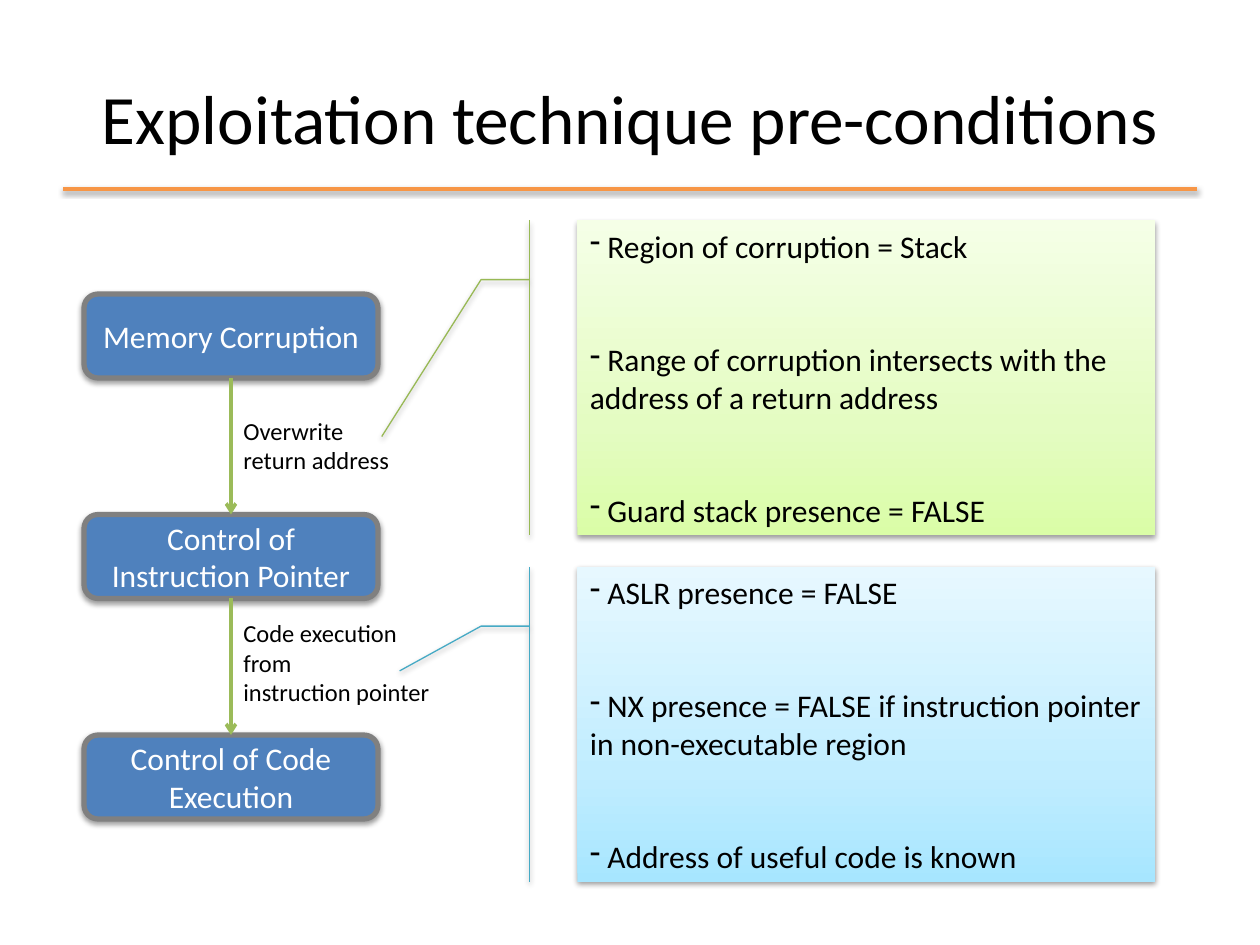
from copy import deepcopy

from lxml import etree
from pptx import Presentation
from pptx.dml.color import RGBColor
from pptx.enum.shapes import MSO_CONNECTOR, MSO_SHAPE
from pptx.enum.text import MSO_ANCHOR, MSO_AUTO_SIZE, PP_ALIGN
from pptx.oxml.ns import qn
from pptx.util import Inches, Pt

STRAIGHT = MSO_CONNECTOR.STRAIGHT
ROUNDED = MSO_SHAPE.ROUNDED_RECTANGLE
CALLOUT = MSO_SHAPE.LINE_CALLOUT_2_ACCENT_BAR
TOP, MIDDLE = MSO_ANCHOR.TOP, MSO_ANCHOR.MIDDLE
LEFT, CENTER = PP_ALIGN.LEFT, PP_ALIGN.CENTER
FIT_SHAPE = MSO_AUTO_SIZE.SHAPE_TO_FIT_TEXT
BOTTOM_SITE, TOP_SITE = 2, 0

FONT = "Calibri"
COLORS = {
    "text": "000000",
    "step_text": "FFFFFF",
    "step_fill": "4F81BD",
    "step_line": "808080",
    "arrow": "9BBB59",
    "rule": "F79646",
    "green_line": "98B955",
    "blue_line": "46AAC5",
}
GRADIENTS = {
    "green": ("DAFDA7", "E4FCC2", "F5FFE7"),
    "blue": ("A7E6FF", "C1EDFF", "E7F8FF"),
}
GRADIENT_POSITIONS = (0, 0.35, 1)

STEPS = ["Memory Corruption", "Control of Instruction Pointer", "Control of Code Execution"]
LABELS = [
    ((22, 39, 16.4, 6.8), ["Overwrite", "return address"]),
    ((22, 58.3, 20.4, 9.7), ["Code execution", "from", "instruction pointer"]),
]
CALLOUTS = [
    ("green", (0.686, -0.339), [
        " Region of corruption = Stack",
        " Range of corruption intersects with the address of a return address",
        " Guard stack presence = FALSE",
    ]),
    ("blue", (0.33, -0.308), [
        " ASLR presence = FALSE",
        " NX presence = FALSE if instruction pointer in non-executable region",
        " Address of useful code is known",
    ]),
]


def grid(units):
    return Inches(units / 12)


def place(box):
    return [grid(units) for units in box]


def color(name):
    return RGBColor.from_string(COLORS[name])


def set_line(shape, name, width):
    shape.line.color.rgb = color(name)
    shape.line.width = Pt(width)


def set_effects(shape, shadow):
    properties = shape._element.spPr
    effects = etree.SubElement(properties, qn("a:effectLst"))
    if shadow:
        outer = etree.SubElement(effects, qn("a:outerShdw"), blurRad=str(Pt(3.1)),
                                 dist=str(Pt(1.6)), dir="5400000", rotWithShape="0")
        black = etree.SubElement(outer, qn("a:srgbClr"), val="000000")
        etree.SubElement(black, qn("a:alpha"), val="38000")


def write(shape, lines, size, name="text", align=LEFT, anchor=TOP):
    frame = shape.text_frame
    frame.text = "\n".join(lines)
    frame.vertical_anchor = anchor
    for paragraph in frame.paragraphs:
        paragraph.alignment = align
        for run in paragraph.runs:
            run.font.name = FONT
            run.font.size = Pt(size)
            run.font.color.rgb = color(name)


def add_header(slide, box):
    left, top, width, height = box
    title = slide.shapes.title
    title.left, title.top, title.width, title.height = place(box)
    write(title, ["Exploitation technique pre-conditions"], 39.6, align=CENTER, anchor=MIDDLE)
    rule = slide.shapes.add_connector(STRAIGHT, *place((left, 18, left + width, 18)))
    set_line(rule, "rule", 2)
    set_effects(rule, True)


def add_step(slide, box, text):
    step = slide.shapes.add_shape(ROUNDED, *place(box))
    step.fill.solid()
    step.fill.fore_color.rgb = color("step_fill")
    set_line(step, "step_line", 3)
    set_effects(step, True)
    write(step, [text], 18, "step_text", CENTER, MIDDLE)
    return step


def add_arrow(slide, start, end):
    arrow = slide.shapes.add_connector(STRAIGHT, 0, 0, 0, 0)
    arrow.begin_connect(start, BOTTOM_SITE)
    arrow.end_connect(end, TOP_SITE)
    set_line(arrow, "arrow", 2)
    etree.SubElement(arrow.line._get_or_add_ln(), qn("a:tailEnd"), type="arrow")
    set_effects(arrow, False)


def add_label(slide, box, lines):
    label = slide.shapes.add_textbox(*place(box))
    write(label, lines, 14)
    label.text_frame.word_wrap = False
    label.text_frame.auto_size = FIT_SHAPE


def add_flow(slide, box):
    left, top, width, height = box
    step_height = 8
    pitch = (height - step_height) / (len(STEPS) - 1)
    steps = [
        add_step(slide, (left, top + index * pitch, width, step_height), text)
        for index, text in enumerate(STEPS)
    ]
    for start, end in zip(steps, steps[1:]):
        add_arrow(slide, start, end)
    for label_box, lines in LABELS:
        add_label(slide, label_box, lines)


def set_gradient(shape, shades):
    shape.fill.gradient()
    shape.fill.gradient_angle = 90
    stop_list = shape._element.spPr.find(".//" + qn("a:gsLst"))
    stop_list.append(deepcopy(stop_list[0]))
    for stop, shade, position in zip(shape.fill.gradient_stops, shades, GRADIENT_POSITIONS):
        stop.color.rgb = RGBColor.from_string(shade)
        stop.position = position


def add_callout(slide, box, theme, pointer, lines):
    callout = slide.shapes.add_shape(CALLOUT, *place(box))
    for index, value in enumerate((0.188, -0.083, 0.188, -0.167, *pointer)):
        callout.adjustments[index] = value
    set_gradient(callout, GRADIENTS[theme])
    set_line(callout, theme + "_line", 0.75)
    set_effects(callout, True)
    write(callout, lines, 18)
    for index, paragraph in enumerate(callout.text_frame.paragraphs):
        paragraph.space_before = Pt(43 if index else 0)
        properties = paragraph._p.get_or_add_pPr()
        properties.set("marL", "0")
        properties.set("indent", "0")
        etree.SubElement(properties, qn("a:buChar"), char="-")


def add_conditions(slide, box):
    left, top, width, height = box
    gap = 3
    callout_height = (height - gap) / len(CALLOUTS)
    for index, (theme, pointer, lines) in enumerate(CALLOUTS):
        callout_top = top + index * (callout_height + gap)
        add_callout(slide, (left, callout_top, width, callout_height), theme, pointer, lines)


def main():
    presentation = Presentation()
    presentation.slide_width, presentation.slide_height = grid(120), grid(90)
    slide = presentation.slides.add_slide(presentation.slide_layouts[5])
    add_header(slide, (6, 3.6, 108, 15))
    add_flow(slide, (8, 28, 28, 50))
    add_conditions(slide, (55, 21, 55, 63))
    presentation.save("out.pptx")


if __name__ == "__main__":
    main()
